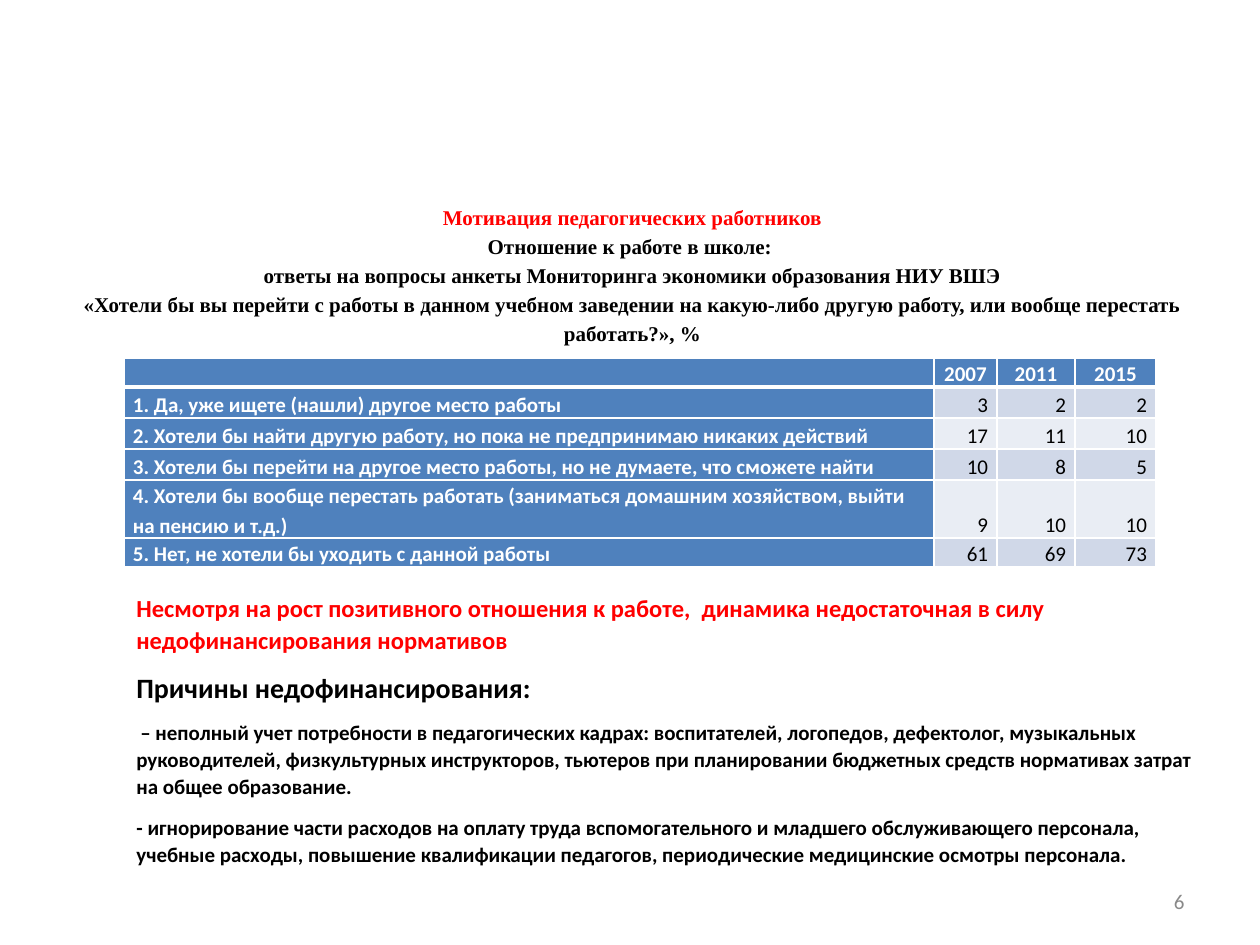
from dataclasses import dataclass
from lxml import etree
from pptx import Presentation
from pptx.dml.color import RGBColor
from pptx.enum.text import MSO_ANCHOR, MSO_AUTO_SIZE, PP_ALIGN
from pptx.oxml.ns import qn
from pptx.util import Pt

PX = 914400 / 126


@dataclass(frozen=True)
class Theme:
    head_font: str = "Times New Roman"
    body_font: str = "Calibri"
    red: str = "FF0000"
    black: str = "000000"
    white: str = "FFFFFF"
    grey: str = "898989"
    accent: str = "4F81BD"
    bands: tuple = ("D0D8E8", "E9EDF4")
    small: int = 10
    text: int = 12
    lead: int = 14
    heading: int = 16


T = Theme()


def px(n):
    return round(n * PX)


def add_run(p, text, color, size=T.text, bold=True, font=T.body_font):
    r = p.add_run()
    r.text = text
    for name, value in dict(name=font, size=Pt(size), bold=bold).items():
        setattr(r.font, name, value)
    r.font.color.rgb = RGBColor.from_string(color)


def fill_text(tf, paragraphs, **para_format):
    """Each paragraph is a list of run argument dicts."""
    for i, runs in enumerate(paragraphs):
        p = tf.paragraphs[0] if i == 0 else tf.add_paragraph()
        for name, value in para_format.items():
            setattr(p, name, value)
        for run in runs:
            add_run(p, **run)


def add_text(s, box, paragraphs, anchor=MSO_ANCHOR.TOP, grow=True, **para_format):
    tf = s.shapes.add_textbox(*map(px, box)).text_frame
    tf.word_wrap = True
    tf.vertical_anchor = anchor
    tf.auto_size = MSO_AUTO_SIZE.SHAPE_TO_FIT_TEXT if grow else MSO_AUTO_SIZE.NONE
    fill_text(tf, paragraphs, **para_format)


def add_title(s, box):
    lines = [
        ("Мотивация педагогических работников", T.red),
        ("Отношение к работе в школе: ", T.black),
        ("ответы на вопросы анкеты Мониторинга экономики образования НИУ ВШЭ", T.black),
        ("«Хотели бы вы перейти с работы в данном учебном заведении на какую-либо "
         "другую работу, или вообще перестать работать?», %", T.black),
    ]
    add_text(s, box, [[dict(text=t, color=c, font=T.head_font)] for t, c in lines],
             alignment=PP_ALIGN.CENTER, line_spacing=1.15)


def set_borders(cell, widths):
    tc_pr = cell._tc.get_or_add_tcPr()
    for side, width in widths.items():
        ln = etree.SubElement(tc_pr, qn(f"a:ln{side}"), w=str(Pt(width)))
        fill = etree.SubElement(ln, qn("a:solidFill"))
        etree.SubElement(fill, qn("a:srgbClr"), val=T.white)


def format_cell(cell, text, row, col):
    header = row == 0 or col == 0
    # Rules: the heavy one divides the header from the body
    set_borders(cell, dict(L=1, R=1, T=3 if row == 1 else 1, B=3 if row == 0 else 1))
    margins = dict(margin_left=px(9), margin_right=px(9), margin_top=0, margin_bottom=0)
    for name, value in dict(margins, vertical_anchor=MSO_ANCHOR.BOTTOM).items():
        setattr(cell, name, value)
    cell.fill.solid()
    cell.fill.fore_color.rgb = RGBColor.from_string(
        T.accent if header else T.bands[(row - 1) % 2])
    if not text:  # keep the empty corner as low as its row
        p = cell.text_frame.paragraphs[0]
        p._p.get_or_add_endParaRPr().set("sz", str(T.text * 100))
        return
    align = (PP_ALIGN.CENTER if row == 0 else
             PP_ALIGN.LEFT if col == 0 else PP_ALIGN.RIGHT)
    run = dict(text=text, color=T.white if header else T.black, bold=header)
    fill_text(cell.text_frame, [[run]], alignment=align, line_spacing=1.15)


def add_survey_table(s, box):
    rows = [
        ("", 2007, 2011, 2015),
        ("1. Да, уже ищете (нашли) другое место работы", 3, 2, 2),
        ("2. Хотели бы найти другую работу, но пока не предпринимаю никаких действий",
         17, 11, 10),
        ("3. Хотели бы перейти на другое место работы, но не думаете, что сможете найти",
         10, 8, 5),
        ("4. Хотели бы вообще перестать работать (заниматься домашним хозяйством, "
         "выйти на пенсию и т.д.)", 9, 10, 10),
        ("5. Нет, не хотели бы уходить с данной работы", 61, 69, 73),
    ]
    table = s.shapes.add_table(len(rows), len(rows[0]), *map(px, box)).table
    for column, width in zip(table.columns, (810, 63, 78, 81)):
        column.width = px(width)
    for row, height in zip(table.rows, (28, 31, 31, 31, 58, 29)):
        row.height = px(height)
    for i, values in enumerate(rows):
        for j, value in enumerate(values):
            format_cell(table.cell(i, j), str(value), i, j)


def add_conclusions(s, box):
    add_text(s, box, [
        [dict(text="Несмотря на рост позитивного отношения к работе,  динамика "
                   "недостаточная в силу недофинансирования нормативов",
              color=T.red, size=T.lead)],
        [dict(text="Причины недофинансирования:", color=T.black, size=T.heading)],
        [dict(text=" ", color=T.black, size=T.small, bold=False),
         dict(text="– неполный учет потребности в педагогических кадрах: воспитателей, "
                   "логопедов, дефектолог, музыкальных руководителей, физкультурных "
                   "инструкторов, тьютеров при планировании бюджетных средств "
                   "нормативах затрат на общее образование.", color=T.black)],
        [dict(text="- игнорирование части расходов на оплату труда вспомогательного и "
                   "младшего обслуживающего персонала, учебные расходы, повышение "
                   "квалификации педагогов, периодические медицинские осмотры "
                   "персонала.", color=T.black)],
    ], line_spacing=1.07, space_after=Pt(8))


def add_page_number(s, box):
    add_text(s, box, [[dict(text="6", color=T.grey, bold=False)]],
             anchor=MSO_ANCHOR.MIDDLE, grow=False, alignment=PP_ALIGN.RIGHT)


def main():
    prs = Presentation()
    prs.slide_width, prs.slide_height = px(1260), px(945)
    s = prs.slides.add_slide(prs.slide_layouts[6])
    add_page_number(s, (903, 876, 294, 50))
    add_conclusions(s, (124, 585, 1095, 291))
    add_title(s, (44, 195, 1177, 159))
    add_survey_table(s, (124, 358, 1032, 208))
    prs.save("out.pptx")


if __name__ == "__main__":
    main()
